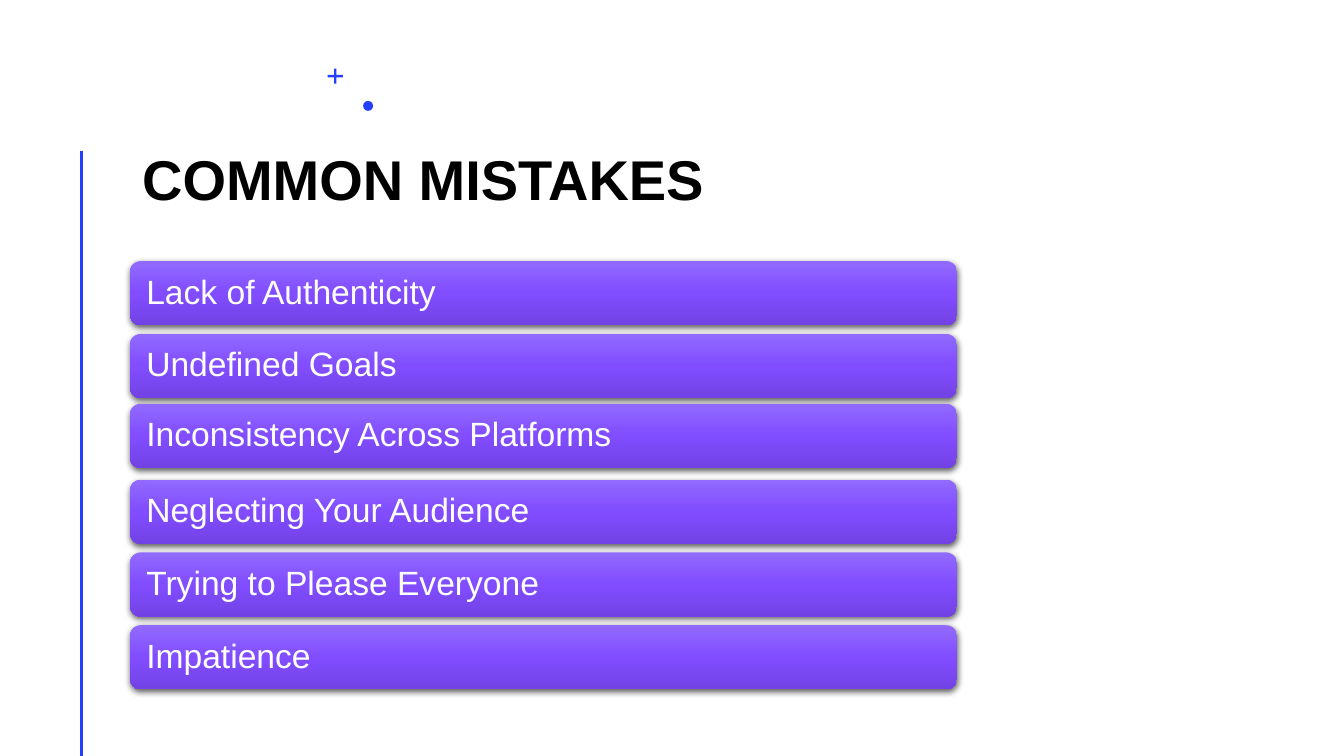
from lxml.etree import SubElement, fromstring
from pptx import Presentation
from pptx.dml.color import RGBColor
from pptx.enum.shapes import MSO_CONNECTOR as Link, MSO_SHAPE as Kind
from pptx.enum.text import MSO_ANCHOR as Anchor, PP_ALIGN as Align
from pptx.oxml.ns import nsdecls, qn
from pptx.util import Inches, Pt

WIDE, HIGH = 13.33, 7.5
BLUE = "243FFF"
STOPS = ((0, "916AFF"), (50, "814DFF"), (100, "7242E5"))
ITEMS = (
    ("Lack of Authenticity", 0),
    ("Undefined Goals", 0),
    ("Inconsistency Across Platforms", -0.03),
    ("Neglecting Your Audience", 0),
    ("Trying to Please Everyone", 0),
    ("Impatience", 0),
)


def tint(code):
    """Turn a hex string into a colour."""
    return RGBColor.from_string(code)


def write(shape, text, size, color, bold=False, anchor=Anchor.MIDDLE,
          left=0, edge=0, leading=0.9):
    """Put one formatted paragraph into a shape."""
    frame = shape.text_frame
    frame.word_wrap = True
    frame.vertical_anchor = anchor
    frame.margin_left = Inches(left)
    frame.margin_right = frame.margin_top = frame.margin_bottom = Inches(edge)
    para = frame.paragraphs[0]
    para.alignment = Align.LEFT
    para.line_spacing = leading
    run = para.add_run()
    run.text = text
    run.font.name, run.font.size, run.font.bold = "Arial", Pt(size), bold
    run.font.color.rgb = tint(color)


def draw(slide, kind, box, color=None):
    """Add a flat shape without outline or shadow."""
    shape = slide.shapes.add_shape(kind, *map(Inches, box))
    if color:
        shape.fill.solid()
        shape.fill.fore_color.rgb = tint(color)
    shape.line.fill.background()
    shape.shadow.inherit = False
    return shape


def shade(shape):
    """Give a shape the vertical gradient and the soft drop shadow."""
    stops = "".join(
        f'<a:gs pos="{pos * 1000}"><a:srgbClr val="{code}"/></a:gs>'
        for pos, code in STOPS)
    props = shape._element.spPr
    props.find(qn("a:prstGeom")).addnext(fromstring(
        f'<a:gradFill {nsdecls("a")} rotWithShape="1"><a:gsLst>{stops}</a:gsLst>'
        '<a:lin ang="5400000" scaled="0"/></a:gradFill>'))
    props.find(qn("a:effectLst")).append(fromstring(
        f'<a:outerShdw {nsdecls("a")} blurRad="{Pt(4.5)}" dist="{Pt(1.5)}" '
        'dir="5400000" algn="ctr" rotWithShape="0">'
        '<a:srgbClr val="000000"><a:alpha val="63000"/></a:srgbClr></a:outerShdw>'))


def add_marks(slide, box):
    """Place the plus and the dot in opposite corners of the box."""
    left, top, width, height = box
    arm, dot = width / 3, width * 0.22
    plus = draw(slide, Kind.CROSS, (left, top, arm, arm), BLUE)
    plus.adjustments[0] = 0.42
    draw(slide, Kind.OVAL,
         (left + width - dot, top + height - dot, dot, dot), BLUE)


def add_rule(slide, left, top):
    """Draw the upright line down to the slide's lower edge."""
    line = slide.shapes.add_connector(
        Link.STRAIGHT, *map(Inches, (left, top, left, HIGH)))
    line.line.color.rgb = tint(BLUE)
    line.line.width = Pt(2)
    SubElement(line._element.spPr, qn("a:effectLst"))


def add_title(slide, box):
    """Write the heading at the foot of the box."""
    title = slide.shapes.add_textbox(*map(Inches, box))
    write(title, "COMMON MISTAKES", 40, "000000", bold=True,
          anchor=Anchor.BOTTOM, leading=Pt(40))


def add_bars(slide, box):
    """Stack one bar per item at an even pitch in the box."""
    left, top, width, height = box
    bar = height * 0.15
    pitch = (height - bar) / (len(ITEMS) - 1)
    for row, (text, nudge) in enumerate(ITEMS):
        shape = draw(slide, Kind.ROUNDED_RECTANGLE,
                     (left, top + row * pitch + nudge, width, bar))
        shade(shape)
        write(shape, text, 24, "FFFFFF", left=0.13, edge=0.1)


def main():
    """Build the slide and save it."""
    deck = Presentation()
    deck.slide_width, deck.slide_height = Inches(WIDE), Inches(HIGH)
    slide = deck.slides.add_slide(deck.slide_layouts[6])
    add_marks(slide, (3.25, 0.68, 0.45, 0.42))
    add_rule(slide, 0.81, HIGH * 0.2)
    add_title(slide, (1.41, 0.7, 11.29, 1.4))
    add_bars(slide, (1.29, 2.59, 8.2, 4.25))
    deck.save("out.pptx")


if __name__ == "__main__":
    main()
